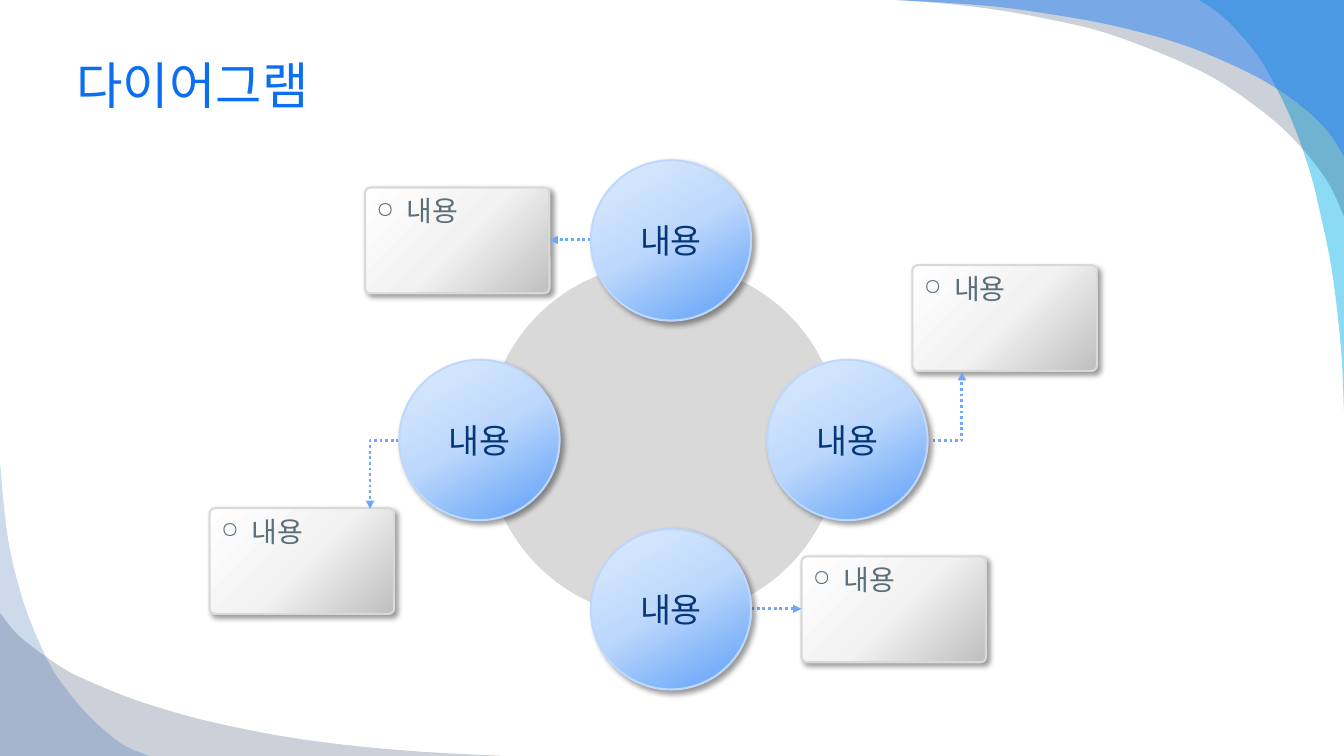
"""Builds a diagram slide with four linked circles and four bulleted boxes."""
from lxml.etree import SubElement
from pptx import Presentation
from pptx.dml.color import RGBColor
from pptx.enum.dml import MSO_LINE
from pptx.enum.shapes import MSO_CONNECTOR, MSO_SHAPE
from pptx.enum.text import MSO_ANCHOR, MSO_AUTO_SIZE, PP_ALIGN
from pptx.oxml.ns import qn
from pptx.util import Inches, Pt

COLORS = {
    "title": "0C6FF2", "box_text": "5C6E7A", "circle_text": "063879",
    "gray": "D9D9D9", "circle_line": "BDD8FC", "connector": "6DA9F8",
    "cyan": "00B1E9", "navy": "021741", "azure": "247FF4", "blue": "084AA1",
    "shadow": "000000",
}
BOX_GRADIENT = [(0, "FFFFFF"), (51, "F2F2F2"), (100, "BFBFBF")]
CIRCLE_GRADIENT = [(0, "DEECFD"), (48, "BDD8FC"), (100, "5B9EF7")]
FONT = "Karla"
LABEL = "내용"


def style_panel(shape, stops, angle, line_color):
    """Give a shape its gradient, outline and soft shadow."""
    shape.fill.gradient()
    shape.fill.gradient_angle = 360 - angle
    properties = shape._element.spPr
    stop_list = properties.find(qn("a:gradFill")).find(qn("a:gsLst"))
    for stop in list(stop_list):
        stop_list.remove(stop)
    for position, color in stops:
        stop = SubElement(stop_list, qn("a:gs"), pos=str(position * 1000))
        SubElement(stop, qn("a:srgbClr"), val=color)
    shape.line.color.rgb = RGBColor.from_string(line_color)
    shape.line.width = Pt(1.5)
    shape.shadow.inherit = False
    shadow = SubElement(properties.find(qn("a:effectLst")), qn("a:outerShdw"),
                        blurRad=str(Pt(4)), dist=str(Pt(3)), dir="2700000",
                        algn="tl", rotWithShape="0")
    shadow_color = SubElement(shadow, qn("a:srgbClr"), val=COLORS["shadow"])
    SubElement(shadow_color, qn("a:alpha"), val="40000")


def write_text(shape, text, size, color):
    """Put one formatted paragraph in a shape and return it."""
    shape.text_frame.text = text
    paragraph = shape.text_frame.paragraphs[0]
    font = paragraph.runs[0].font
    font.name, font.size = FONT, Pt(size)
    font.color.rgb = RGBColor.from_string(color)
    return paragraph


presentation = Presentation()
presentation.slide_width = Inches(13.33)
presentation.slide_height = Inches(7.5)
slide = presentation.slides.add_slide(presentation.slide_layouts[5])
shapes = slide.shapes

waves = [
    ("cyan", 45, (13.33, 0), [
        (11.89, 0), (12.1, 0.14), (12.31, 0.35), (12.5, 0.59), (12.69, 0.93),
        (12.85, 1.29), (13, 1.73), (13.1, 2.14), (13.2, 2.62), (13.27, 3.15),
        (13.31, 3.6), (13.33, 4.08)]),
    ("navy", 20, (13.33, 0), [
        (8.89, 0), (9.42, 0.04), (9.9, 0.1), (10.35, 0.18), (10.88, 0.3),
        (11.34, 0.46), (11.75, 0.63), (12.1, 0.81), (12.45, 1.05),
        (12.74, 1.29), (12.99, 1.56), (13.19, 1.84), (13.33, 2.15)]),
    ("azure", 49, (13.33, 0), [
        (8.89, 0), (9.42, 0.03), (9.91, 0.07), (10.35, 0.13), (10.88, 0.22),
        (11.35, 0.33), (11.75, 0.45), (12.1, 0.59), (12.46, 0.76),
        (12.74, 0.93), (13, 1.13), (13.19, 1.33), (13.33, 1.55)]),
    ("navy", 20, (0, 7.5), [
        (0, 6.08), (0.16, 6.28), (0.38, 6.46), (0.66, 6.65), (0.98, 6.8),
        (1.39, 6.96), (1.89, 7.11), (2.36, 7.22), (2.9, 7.32), (3.52, 7.4),
        (4.22, 7.46), (5, 7.5)]),
    ("blue", 20, (0, 7.5), [
        (0, 4.58), (0.03, 4.93), (0.08, 5.35), (0.16, 5.72), (0.26, 6.05),
        (0.37, 6.33), (0.52, 6.64), (0.69, 6.88), (0.89, 7.11), (1.1, 7.3),
        (1.26, 7.41), (1.48, 7.5)]),
]
for color, opacity, corner, knots in waves:
    padded = [knots[0], *knots, knots[-1]]
    outline = []
    for before, start, end, after in zip(padded, padded[1:], padded[2:], padded[3:]):
        for step in range(5):
            t = step / 5
            outline.append(tuple(
                Inches(b + t * (c - a) / 2 + t**2 * (2 * a - 5 * b + 4 * c - d) / 2
                       + t**3 * (3 * b - a - 3 * c + d) / 2)
                for a, b, c, d in zip(before, start, end, after)))
    outline.append(tuple(map(Inches, knots[-1])))
    builder = shapes.build_freeform(Inches(corner[0]), Inches(corner[1]))
    builder.add_line_segments(outline, close=True)
    wave = builder.convert_to_shape()
    wave.fill.solid()
    wave.fill.fore_color.rgb = RGBColor.from_string(COLORS[color])
    fill_color = wave._element.spPr.find(qn("a:solidFill"))[0]
    SubElement(fill_color, qn("a:alpha"), val=str(opacity * 1000))
    wave.line.fill.background()
    wave.shadow.inherit = False

title = shapes.title
title.left, title.top = Inches(0.66), Inches(0.33)
title.width, title.height = Inches(12), Inches(1.01)
title_paragraph = write_text(title, "다이어그램", 36, COLORS["title"])
title_paragraph.alignment = PP_ALIGN.LEFT
title.text_frame.vertical_anchor = MSO_ANCHOR.MIDDLE
title.text_frame.auto_size = MSO_AUTO_SIZE.NONE

for left, top in [(2.08, 5.04), (7.95, 5.52), (3.62, 1.86), (9.05, 2.63)]:
    box = shapes.add_shape(MSO_SHAPE.ROUNDED_RECTANGLE, Inches(left), Inches(top),
                           Inches(1.83), Inches(1.05))
    box.adjustments[0] = 0.05
    style_panel(box, BOX_GRADIENT, 45, COLORS["gray"])
    paragraph = write_text(box, LABEL, 20, COLORS["box_text"])
    paragraph.alignment = PP_ALIGN.LEFT
    box.text_frame.vertical_anchor = MSO_ANCHOR.TOP
    bullet = paragraph._p.get_or_add_pPr()
    bullet.set("marL", str(Inches(0.3)))
    bullet.set("indent", str(Inches(-0.3)))
    bullet_color = SubElement(bullet, qn("a:buClr"))
    SubElement(bullet_color, qn("a:srgbClr"), val=COLORS["box_text"])
    SubElement(bullet, qn("a:buSzPct"), val="80000")
    SubElement(bullet, qn("a:buChar"), char="○")

hub = shapes.add_shape(MSO_SHAPE.OVAL, Inches(4.82), Inches(2.61),
                       Inches(3.52), Inches(3.52))
hub.fill.solid()
hub.fill.fore_color.rgb = RGBColor.from_string(COLORS["gray"])
hub.line.fill.background()
hub.shadow.inherit = False

links = [
    (3.96, 4.37, 3.67, 5.05), (9.25, 4.37, 9.54, 3.69),
    (7.45, 6.04, 7.95, 6.04), (5.86, 2.38, 5.45, 2.38),
]
for start_x, start_y, end_x, end_y in links:
    bent = start_y != end_y
    connector = shapes.add_connector(
        MSO_CONNECTOR.ELBOW if bent else MSO_CONNECTOR.STRAIGHT,
        Inches(start_x), Inches(start_y), Inches(end_x), Inches(end_y))
    properties = connector._element.spPr
    if bent:
        properties.find(qn("a:prstGeom")).set("prst", "bentConnector2")
    connector.line.color.rgb = RGBColor.from_string(COLORS["connector"])
    connector.line.width = Pt(2)
    connector.line.dash_style = MSO_LINE.ROUND_DOT
    SubElement(properties.find(qn("a:ln")), qn("a:tailEnd"), type="triangle")
    SubElement(properties, qn("a:effectLst"))

for left, top in [(7.61, 3.57), (3.96, 3.57), (5.86, 5.25), (5.86, 1.59)]:
    circle = shapes.add_shape(MSO_SHAPE.OVAL, Inches(left), Inches(top),
                              Inches(1.59), Inches(1.59))
    style_panel(circle, CIRCLE_GRADIENT, 60, COLORS["circle_line"])
    write_text(circle, LABEL, 24, COLORS["circle_text"]).alignment = PP_ALIGN.CENTER
    circle.text_frame.vertical_anchor = MSO_ANCHOR.MIDDLE

presentation.save("out.pptx")
